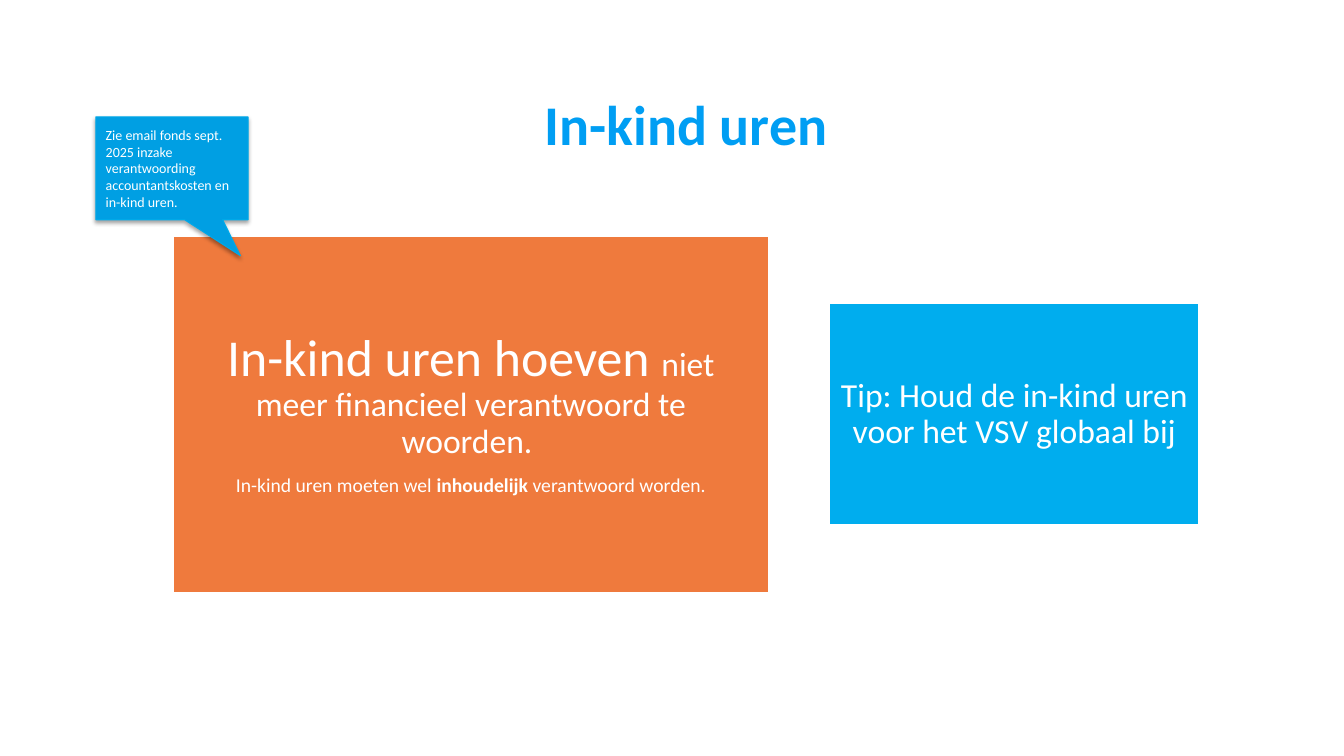
from lxml import etree
from pptx import Presentation
from pptx.dml.color import RGBColor
from pptx.enum.shapes import MSO_SHAPE
from pptx.enum.text import MSO_ANCHOR, PP_ALIGN
from pptx.oxml.ns import qn
from pptx.util import Inches, Pt

RECT, CALLOUT = MSO_SHAPE.RECTANGLE, MSO_SHAPE.RECTANGULAR_CALLOUT
MIDDLE = MSO_ANCHOR.MIDDLE
LEFT, CENTER = PP_ALIGN.LEFT, PP_ALIGN.CENTER

WHITE = RGBColor(0xFF, 0xFF, 0xFF)
TITLE_BLUE = RGBColor(0x00, 0x9E, 0xF3)
ORANGE = RGBColor(0xEF, 0x7A, 0x3D)
TIP_BLUE = RGBColor(0x00, 0xAD, 0xEE)
NOTE_BLUE = RGBColor(0x00, 0x9F, 0xE3)
NOTE_LINE = RGBColor(0x00, 0xA9, 0xE9)

FONT = "Calibri"
BODY = dict(alignment=CENTER, line_spacing=0.9)


def set_attrs(obj, values):
    for name, value in values.items():
        setattr(obj, name, value)


def write(sp, paragraphs, inset, color=WHITE):
    """Fill a shape with (paragraph format, [(text, size, bold), ...]) items."""
    tf = sp.text_frame
    side, top = (Inches(v) for v in inset)
    set_attrs(tf, dict(word_wrap=True, vertical_anchor=MIDDLE,
                       margin_left=side, margin_right=side,
                       margin_top=top, margin_bottom=top))
    for i, (layout, runs) in enumerate(paragraphs):
        p = tf.add_paragraph() if i else tf.paragraphs[0]
        set_attrs(p, layout)
        for text, size, bold in runs:
            r = p.add_run()
            r.text = text
            set_attrs(r.font, dict(name=FONT, size=Pt(size), bold=bold))
            r.font.color.rgb = color


def add_box(slide, kind, box, fill, line, width):
    sp = slide.shapes.add_shape(kind, *map(Inches, box))
    sp.shadow.inherit = False
    sp.fill.solid()
    sp.fill.fore_color.rgb = fill
    sp.line.color.rgb = line
    sp.line.width = Pt(width)
    return sp


def add_title(slide, box):
    sp = slide.shapes.add_textbox(*map(Inches, box))
    write(sp, [(BODY, [("In-kind uren", 40, True)])], (0, 0), TITLE_BLUE)


def add_panel(slide, box, fill, inset, paragraphs):
    sp = add_box(slide, RECT, box, fill, WHITE, 2)
    write(sp, paragraphs, (inset, inset))


def add_note(slide, box):
    sp = add_box(slide, CALLOUT, box, NOTE_BLUE, NOTE_LINE, 0.75)
    sp.adjustments[0], sp.adjustments[1] = 0.45, 0.85
    # Soft shadow straight below the callout
    effects = sp._element.spPr.find(qn("a:effectLst"))
    shadow = etree.SubElement(effects, qn("a:outerShdw"), blurRad=str(Pt(3.1)),
                              dist=str(Pt(1.8)), dir="5400000", rotWithShape="0")
    black = etree.SubElement(shadow, qn("a:srgbClr"), val="000000")
    etree.SubElement(black, qn("a:alpha"), val="35000")
    text = ("Zie email fonds sept. 2025 inzake verantwoording "
            "accountantskosten en in-kind uren.")
    write(sp, [(dict(alignment=LEFT), [(text, 10, False)])], (0.1, 0.05))


def main():
    prs = Presentation()
    prs.slide_width, prs.slide_height = Inches(13.33), Inches(7.5)
    slide = prs.slides.add_slide(prs.slide_layouts[6])

    add_title(slide, (1.7, 1.05, 10.21, 0.43))

    # Main message and tip, both centred on the same height
    left, right, middle = 1.71, 11.9, 4.11
    main_w, main_h, tip_w, tip_h = 5.92, 3.55, 3.68, 2.21
    add_panel(slide, (left, middle - main_h / 2, main_w, main_h), ORANGE, 0.15, [
        (dict(BODY, space_after=Pt(11)),
         [("In-kind uren hoeven ", 37, False),
          ("niet meer financieel verantwoord te woorden. ", 24, False)]),
        (BODY, [("In-kind uren moeten wel ", 14, False),
                ("inhoudelijk ", 14, True),
                ("verantwoord worden.", 14, False)]),
    ])
    add_panel(slide, (right - tip_w, middle - tip_h / 2, tip_w, tip_h), TIP_BLUE, 0.1, [
        (BODY, [("Tip: Houd de in-kind uren voor het VSV globaal bij", 24, False)]),
    ])

    add_note(slide, (0.95, 1.16, 1.51, 1.02))
    prs.save("out.pptx")


if __name__ == "__main__":
    main()
